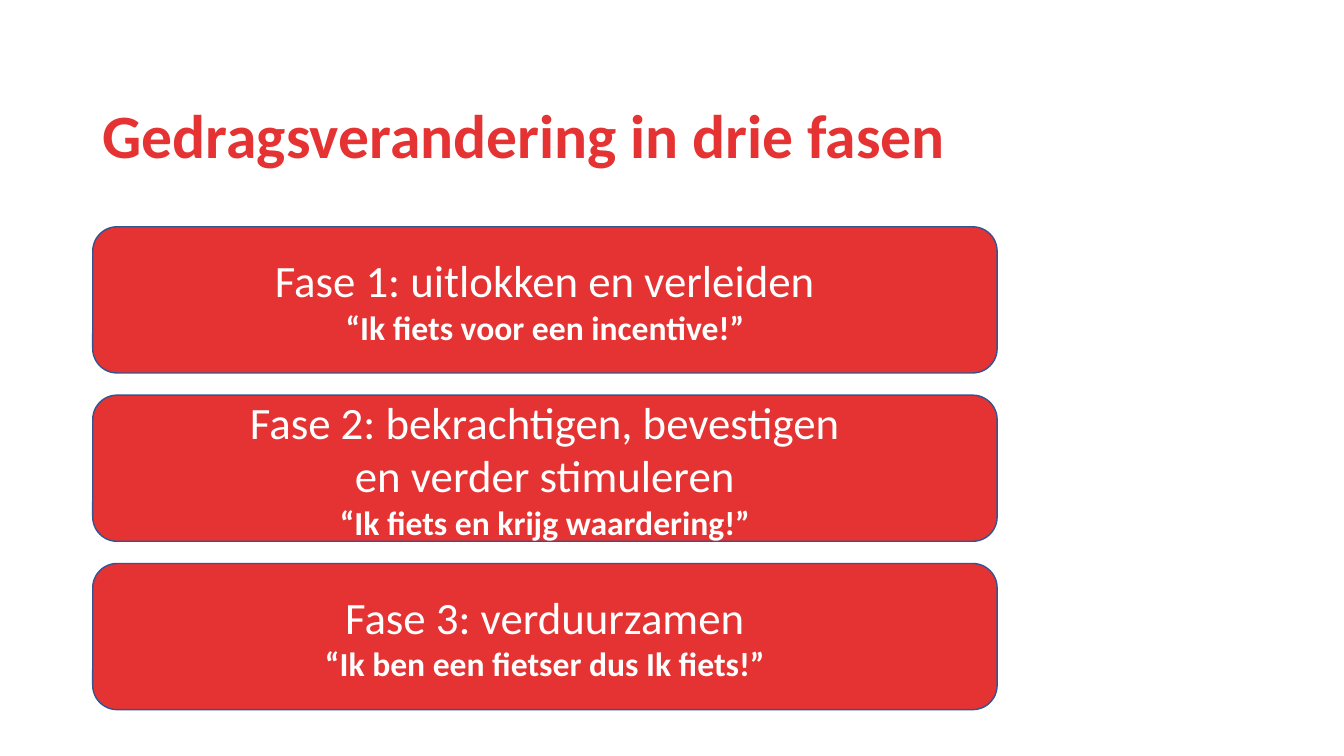
from pptx import Presentation
from pptx.dml.color import RGBColor
from pptx.enum.shapes import MSO_SHAPE
from pptx.enum.text import MSO_ANCHOR, PP_ALIGN
from pptx.util import Inches, Pt

CARD = MSO_SHAPE.FLOWCHART_ALTERNATE_PROCESS
MIDDLE = MSO_ANCHOR.MIDDLE
LEFT, CENTER = PP_ALIGN.LEFT, PP_ALIGN.CENTER

theme = {
    "red": RGBColor(0xE4, 0x33, 0x32),
    "blue": RGBColor(0x32, 0x54, 0x91),
    "white": RGBColor(0xFF, 0xFF, 0xFF),
    "face": "Calibri",
    "title": Pt(44),
    "phase": Pt(32),
    "quote": Pt(24),
}


def style(para, words, align, tone, **form):
    para.text = words
    para.alignment = align
    for run in para.runs:
        run.font.color.rgb = theme[tone]
        for key, value in {"name": theme["face"], **form}.items():
            setattr(run.font, key, value)


deck = Presentation()
deck.slide_width, deck.slide_height = Inches(13.33), Inches(7.5)
slide = deck.slides.add_slide(deck.slide_layouts[6])

left, high = Inches(0.92), Inches(1.45)
top, step, wide = Inches(2.25), Inches(1.67), Inches(8.97)

title = slide.shapes.add_textbox(left, Inches(0.65), Inches(9.28), high)
frame = title.text_frame
frame.word_wrap = True
frame.vertical_anchor = MIDDLE
head = frame.paragraphs[0]
head.line_spacing = 0.9
style(head, "Gedragsverandering in drie fasen", LEFT, "red",
      size=theme["title"], bold=True)

phases = [
    ("Fase 1: uitlokken en verleiden", "“Ik fiets voor een incentive!”"),
    ("Fase 2: bekrachtigen, bevestigen\ven verder stimuleren",
     "“Ik fiets en krijg waardering!”"),
    ("Fase 3: verduurzamen", "“Ik ben een fietser dus Ik fiets!”"),
]

for row, (phase, quote) in enumerate(phases):
    card = slide.shapes.add_shape(CARD, left, top + row * step, wide, high)
    card.shadow.inherit = False
    card.fill.solid()
    card.fill.fore_color.rgb = theme["red"]
    card.line.color.rgb = theme["blue"]
    card.line.width = Pt(1)
    frame = card.text_frame
    frame.word_wrap = True
    frame.vertical_anchor = MIDDLE
    style(frame.paragraphs[0], phase, CENTER, "white",
          size=theme["phase"], bold=False)
    style(frame.add_paragraph(), quote, CENTER, "white",
          size=theme["quote"], bold=True)

deck.save("out.pptx")
